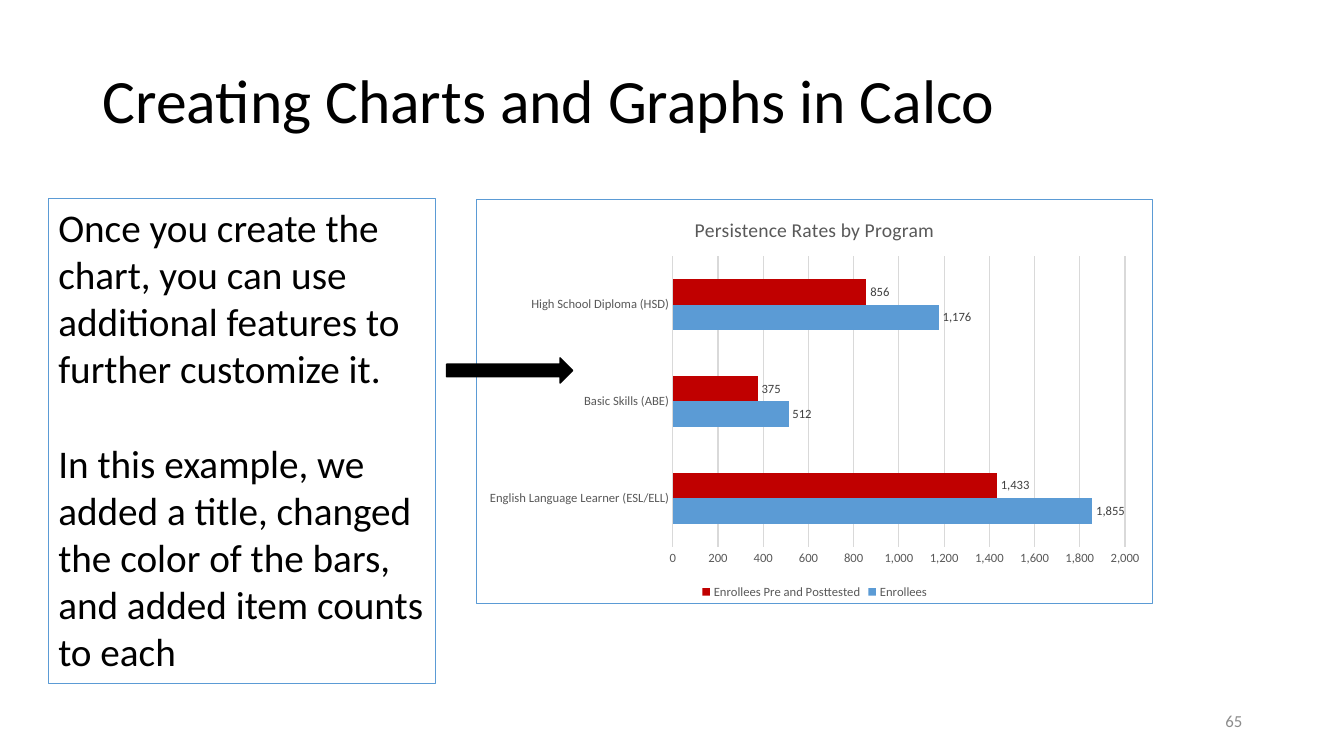
from lxml import etree
from pptx import Presentation
from pptx.chart.data import CategoryChartData
from pptx.dml.color import RGBColor
from pptx.enum.chart import XL_CHART_TYPE as Kind, XL_LABEL_POSITION as Spot
from pptx.enum.chart import XL_LEGEND_POSITION as Side, XL_TICK_MARK as Tick
from pptx.enum.shapes import MSO_SHAPE as Shape
from pptx.enum.text import MSO_ANCHOR as Anchor, PP_ALIGN as Align
from pptx.oxml import parse_xml
from pptx.util import Inches, Pt

TITLE = "Creating Charts and Graphs in Calco"
NOTES = [
    "Once you create the chart, you can use additional features to further customize it.",
    "In this example, we added a title, changed the color of the bars, "
    "and added item counts to each",
]
HEAD = "Persistence Rates by Program"
CATS = ["English Language Learner (ESL/ELL)", "Basic Skills (ABE)", "High School Diploma (HSD)"]
SERIES = [
    ("Enrollees", (1855, 512, 1176), "5B9BD5"),
    ("Enrollees Pre and Posttested", (1433, 375, 856), "C00000"),
]
PAGE = "65"
FONT, BLACK, BLUE, GRAY, PALE = "Calibri", "000000", "5B9BD5", "595959", "D9D9D9"
TOP = 1.97


def hue(code):
    return RGBColor.from_string(code)


def style(font, size, color):
    font.name, font.size, font.bold = FONT, Pt(size), False
    font.color.rgb = hue(color)


def stroke(line, color, width=0.75):
    line.color.rgb = hue(color)
    line.width = Pt(width)


def write(shape, lines, size, color, anchor=Anchor.TOP):
    frame = shape.text_frame
    frame.word_wrap, frame.vertical_anchor = True, anchor
    frame.text = "\n".join(lines)
    for para in frame.paragraphs:
        para.alignment = Align.LEFT
        style(para.runs[0].font, size, color)
    return frame.paragraphs


def box(*at):
    return [Inches(n) for n in at]


def border(chart, color):
    """Give the chart area a thin outline."""
    area = parse_xml(
        '<c:spPr xmlns:c="http://schemas.openxmlformats.org/drawingml/2006/chart" '
        'xmlns:a="http://schemas.openxmlformats.org/drawingml/2006/main"><a:noFill/>'
        f'<a:ln w="{Pt(0.75)}"><a:solidFill><a:srgbClr val="{color}"/></a:solidFill></a:ln>'
        "</c:spPr>")
    root = chart.element if hasattr(chart, "element") else chart._chartSpace
    root.find(etree.QName(area).text.replace("spPr", "chart")).addnext(area)


def add_bars(shapes):
    data = CategoryChartData(number_format="#,##0")
    data.categories = CATS
    for name, vals, _ in SERIES:
        data.add_series(name, vals)
    chart = shapes.add_chart(Kind.BAR_CLUSTERED, *box(4.72, TOP, 6.72, 4.02), data).chart
    style(chart.font, 10, BLACK)
    border(chart, BLUE)

    chart.has_title = True
    chart.chart_title.text_frame.text = HEAD
    style(chart.chart_title.text_frame.paragraphs[0].runs[0].font, 14, GRAY)
    chart.has_legend = True
    chart.legend.position = Side.BOTTOM
    chart.legend.include_in_layout = False
    style(chart.legend.font, 9, GRAY)

    cat, val = chart.category_axis, chart.value_axis
    for axis in (cat, val):
        axis.major_tick_mark = axis.minor_tick_mark = Tick.NONE
        style(axis.tick_labels.font, 9, GRAY)
    stroke(cat.format.line, PALE)
    val.format.line.fill.background()
    val.has_major_gridlines = True
    stroke(val.major_gridlines.format.line, PALE)
    val.tick_labels.number_format = "#,##0"
    val.tick_labels.number_format_is_linked = False

    plot = chart.plots[0]
    plot.gap_width, plot.overlap, plot.vary_by_categories = 182, 0, False
    for bars, (_, _, color) in zip(plot.series, SERIES):
        bars.format.fill.solid()
        bars.format.fill.fore_color.rgb = hue(color)
        tags = bars.data_labels
        tags.show_value, tags.position = True, Spot.OUTSIDE_END
        tags.number_format, tags.number_format_is_linked = "#,##0", False
        style(tags.font, 9, "404040")


def main():
    deck = Presentation()
    deck.slide_width, deck.slide_height = box(13.33, 7.5)
    shapes = deck.slides.add_slide(deck.slide_layouts[6]).shapes

    title = shapes.add_textbox(*box(0.92, 0.4, 11.5, 1.25))
    write(title, [TITLE], 44, BLACK, Anchor.MIDDLE)[0].line_spacing = 0.9

    add_bars(shapes)

    arrow = shapes.add_shape(Shape.RIGHT_ARROW, *box(4.43, 3.55, 1.25, 0.25))
    arrow.shadow.inherit = False
    arrow.fill.solid()
    arrow.fill.fore_color.rgb = hue(BLACK)
    stroke(arrow.line, BLACK, 1)

    panel = shapes.add_shape(Shape.RECTANGLE, *box(0.48, TOP, 3.84, 4.81))
    panel.shadow.inherit = False
    panel.fill.background()
    stroke(panel.line, BLUE)
    write(panel, NOTES, 28, BLACK)[1].space_before = Pt(34)

    number = shapes.add_textbox(*box(9.42, 6.95, 3, 0.4))
    write(number, [PAGE], 12, "8C8C8C", Anchor.MIDDLE)[0].alignment = Align.RIGHT

    deck.save("out.pptx")


if __name__ == "__main__":
    main()
